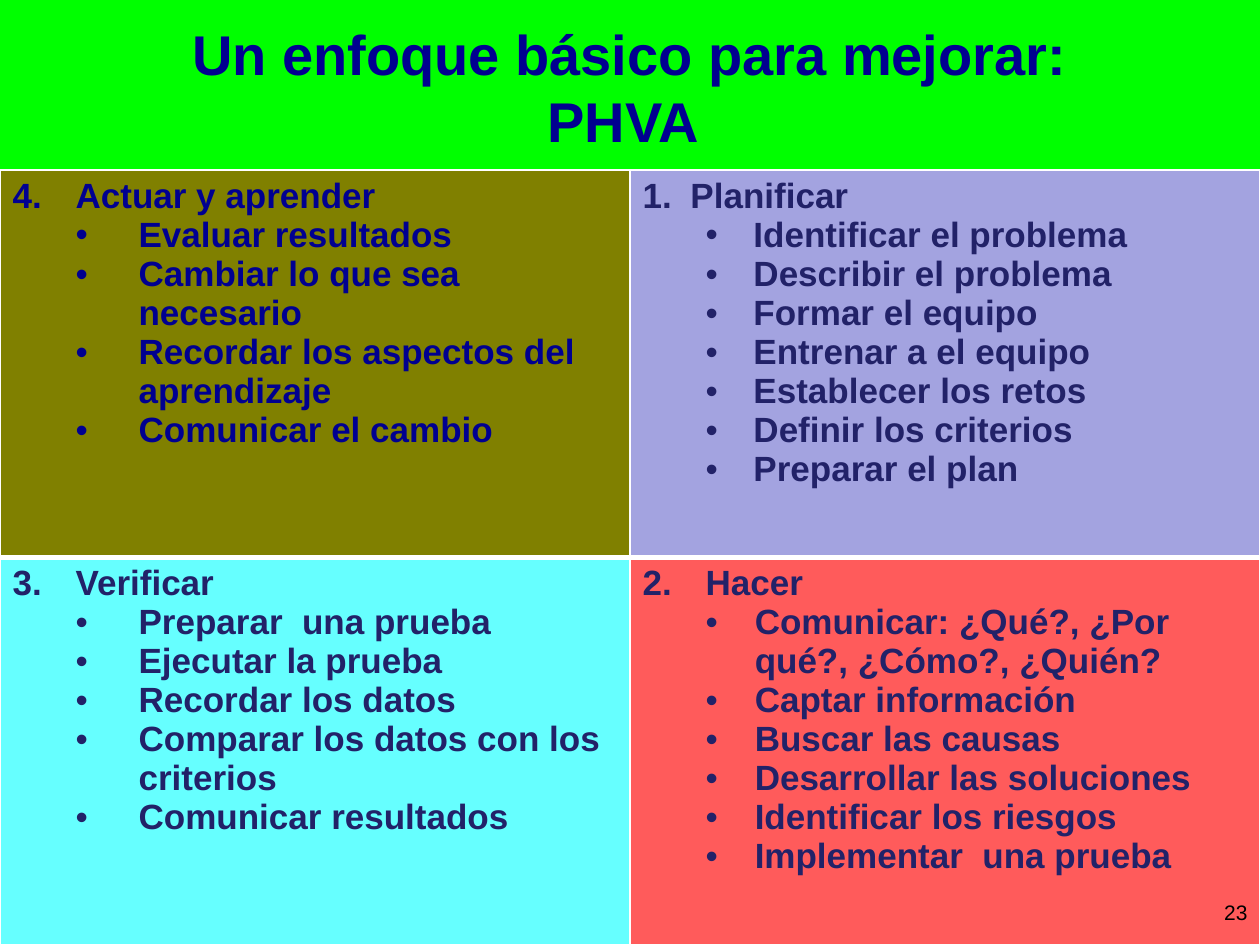
from lxml import etree
from pptx import Presentation
from pptx import util as u
from pptx.dml.color import RGBColor
from pptx.enum import text
from pptx.oxml.ns import qn

LIME = RGBColor(0x00, 0xFF, 0x00)
NAVY = RGBColor(0x00, 0x00, 0x90)
INDIGO = RGBColor(0x22, 0x22, 0x68)
BLACK = RGBColor(0, 0, 0)
OLIVE = RGBColor(0x80, 0x80, 0x00)
LILAC = RGBColor(0xA3, 0xA3, 0xE0)
CYAN = RGBColor(0x66, 0xFF, 0xFF)
CORAL = RGBColor(0xFF, 0x5B, 0x5B)

WIDE, HIGH = 10, 7.5
TOP = 0.18 * HIGH
TITLE = ["Un enfoque básico para mejorar:", "PHVA "]
PAGE = "23"

# number, heading, fill, ink, heading indent, item margin, item indent, items
STEPS = [
    [(4, "Actuar y aprender", OLIVE, NAVY, 0.5, 1, 0.5,
      ["Evaluar resultados", "Cambiar lo que sea necesario",
       "Recordar los aspectos del aprendizaje", "Comunicar el cambio"]),
     (1, "Planificar", LILAC, INDIGO, 0.38, 0.88, 0.38,
      ["Identificar el problema", "Describir el problema",
       "Formar el equipo", "Entrenar a el equipo", "Establecer los retos",
       "Definir los criterios", "Preparar el plan"])],
    [(3, "Verificar", CYAN, INDIGO, 0.5, 1, 0.5,
      ["Preparar  una prueba", "Ejecutar la prueba", "Recordar los datos",
       "Comparar los datos con los criterios", "Comunicar resultados"]),
     (2, "Hacer", CORAL, INDIGO, 0.5, 0.89, 0.39,
      ["Comunicar: ¿Qué?, ¿Por qué?, ¿Cómo?, ¿Quién?",
       "Captar información", "Buscar las causas",
       "Desarrollar las soluciones", "Identificar los riesgos",
       "Implementar  una prueba"])],
]


def style(para, size, ink, bold=True):
    font = para.font
    font.name, font.size, font.bold = "Arial", u.Pt(size), bold
    font.color.rgb = ink


def mark(para, left, hang, tag, **attrs):
    """Give a paragraph a hanging indent and a bullet or number."""
    props = para._p.get_or_add_pPr()
    props.set("marL", str(u.Inches(left)))
    props.set("indent", str(-u.Inches(hang)))
    face = etree.Element(qn("a:buFont"), typeface="Arial")
    sign = etree.Element(qn(tag), **attrs)
    props.insert(0, face)
    props.insert(1, sign)


def edge(cell, row):
    """Draw white borders, thicker between the two rows."""
    props = cell._tc.get_or_add_tcPr()
    for side in "LRTB":
        wide = 3 if side == "BT"[row] else 1
        line = etree.SubElement(props, qn("a:ln" + side), w=str(u.Pt(wide)))
        fill = etree.SubElement(line, qn("a:solidFill"))
        etree.SubElement(fill, qn("a:srgbClr"), val="FFFFFF")


def fill_cell(cell, row, step):
    num, head, fill, ink, hang, left, dent, items = step
    edge(cell, row)
    cell.fill.solid()
    cell.fill.fore_color.rgb = fill
    frame = cell.text_frame
    frame.text = "\n".join([head] + items)
    for i, para in enumerate(frame.paragraphs):
        style(para, 20, ink)
        if i:
            para.level = 1
            mark(para, left, dent, "a:buChar", char="•")
        else:
            mark(para, hang, hang, "a:buAutoNum",
                 type="arabicPeriod", startAt=str(num))


def main():
    deck = Presentation()
    deck.slide_width, deck.slide_height = u.Inches(WIDE), u.Inches(HIGH)
    slide = deck.slides.add_slide(deck.slide_layouts[5])

    title = slide.shapes.title
    title.left = title.top = 0
    title.width, title.height = u.Inches(WIDE), u.Inches(1.38)
    title.fill.solid()
    title.fill.fore_color.rgb = LIME
    frame = title.text_frame
    frame.text = "\n".join(TITLE)
    frame.vertical_anchor = text.MSO_ANCHOR.MIDDLE
    for para in frame.paragraphs:
        para.alignment = text.PP_ALIGN.CENTER
        style(para, 32, NAVY)

    rows, cols = len(STEPS), len(STEPS[0])
    grid = slide.shapes.add_table(
        rows, cols, 0, u.Inches(TOP),
        u.Inches(WIDE), u.Inches(HIGH - TOP)).table
    for r, line in enumerate(STEPS):
        for c, step in enumerate(line):
            fill_cell(grid.cell(r, c), r, step)

    wide, high = 2.33, 0.52
    box = slide.shapes.add_textbox(
        u.Inches(WIDE - wide), u.Inches(HIGH - high),
        u.Inches(wide), u.Inches(high))
    frame = box.text_frame
    frame.word_wrap = True
    frame.vertical_anchor = text.MSO_ANCHOR.MIDDLE
    frame.text = PAGE
    para = frame.paragraphs[0]
    para.alignment = text.PP_ALIGN.RIGHT
    style(para, 12, BLACK, False)

    deck.save("out.pptx")


if __name__ == "__main__":
    main()
